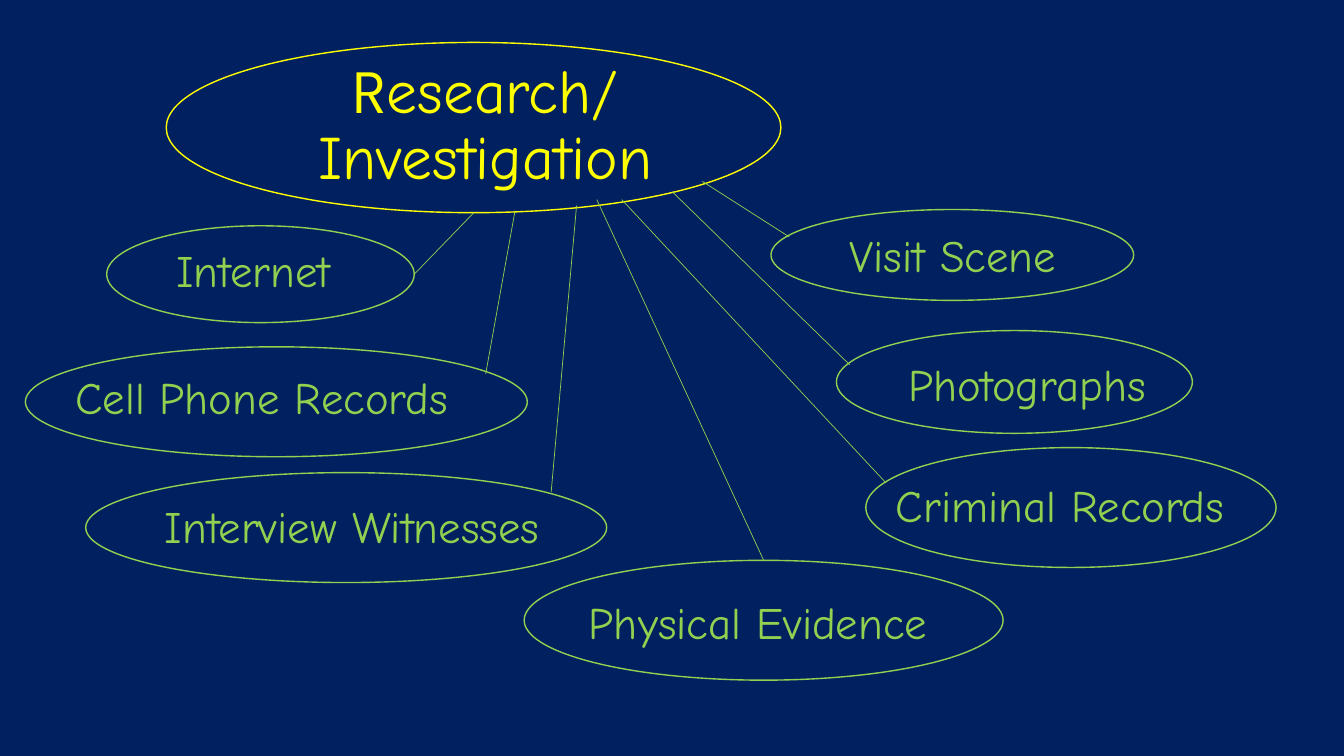
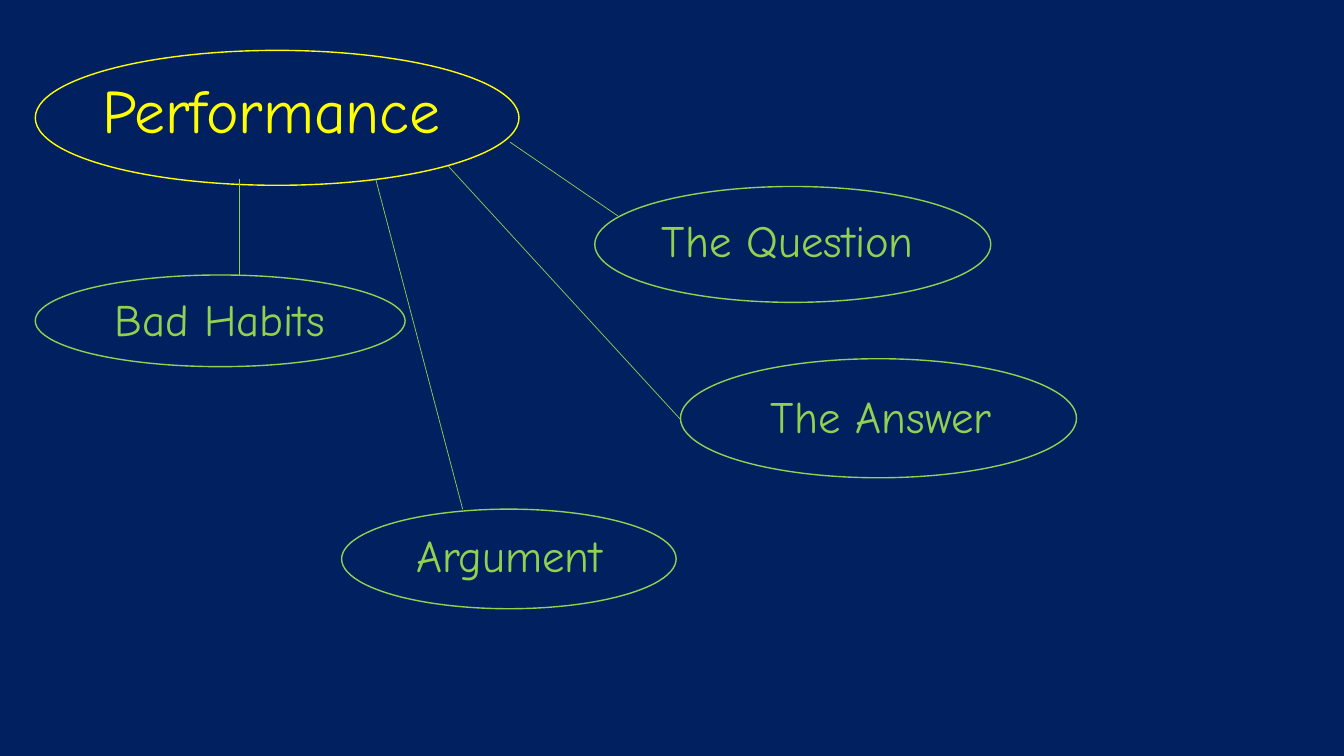
"""Build two mind-map slides: a yellow topic with green branches on navy."""
from lxml import etree
from pptx import Presentation
from pptx import util as u
from pptx.dml.color import RGBColor
from pptx.enum import shapes, text
from pptx.oxml.ns import qn

COLORS = {"navy": "002060", "topic": "FFFF00", "branch": "92D050"}
BODY, ACCENT = "Comic Neue", "League Spartan"
CENTER, LEFT = text.PP_ALIGN.CENTER, text.PP_ALIGN.LEFT
STYLES = {
    "topic": {"size": u.Pt(44), "spacing": 0.9},
    "branch": {"size": u.Pt(32), "spacing": 1.0},
}


def add_label(page, role, place, lines, align):
    box = page.shapes.add_textbox(*map(u.Cm, place))
    frame = box.text_frame
    frame.word_wrap = True
    frame.vertical_anchor = text.MSO_ANCHOR.MIDDLE
    para = frame.paragraphs[0]
    para.alignment = align
    para.line_spacing = STYLES[role]["spacing"]
    for number, line in enumerate(lines):
        if number:
            para.add_line_break()
        for words, face in line:
            span = para.add_run()
            span.text = words
            span.font.color.rgb = RGBColor.from_string(COLORS[role])
            for name, value in {"name": face, "size": STYLES[role]["size"]}.items():
                setattr(span.font, name, value)


def add_oval(page, role, place):
    oval = page.shapes.add_shape(shapes.MSO_SHAPE.OVAL, *map(u.Cm, place))
    oval.shadow.inherit = False
    oval.fill.background()
    oval.line.color.rgb = RGBColor.from_string(COLORS[role])
    oval.line.width = u.Pt(1)
    return oval


slides = [
    {
        "lines": [[("R", ACCENT), ("esearch/", BODY)], [("Investigation", BODY)]],
        "align": CENTER,
        "label": (5.74, 1.35, 13, 3.68),
        "oval": (4.19, 1.07, 15.49, 4.29),
        "branches": [
            ("Visit Scene", CENTER, (17.98, 5.56, 12.07, 1.7),
             (19.43, 5.28, 9.14, 2.29), (17.7, 4.57, 19.89, 5.97)),
            ("Photographs", CENTER, (21.34, 8.81, 9.09, 1.7),
             (21.08, 8.33, 8.97, 2.59), (16.94, 4.83, 21.41, 9.19)),
            ("Criminal Records", LEFT, (22.33, 11.89, 9.4, 1.63),
             (21.82, 11.28, 10.34, 3.02), (15.67, 5.03, 22.33, 12.17)),
            ("Physical Evidence", CENTER, (12.34, 14.61, 13.54, 2.11),
             (13.21, 14.12, 12.07, 3.02), (15.04, 5.03, 19.24, 14.12)),
            ("Interview Witnesses", CENTER, (3.38, 12.6, 11, 1.27),
             (2.16, 11.91, 13.13, 2.77), (14.53, 5.18, 13.89, 12.4)),
            ("Cell Phone Records", LEFT, (1.65, 9.19, 10.69, 1.63),
             (0.64, 8.74, 12.65, 2.77), (12.98, 5.31, 12.24, 9.42)),
            ("Internet", CENTER, (2.34, 5.97, 8.1, 1.63),
             (2.69, 5.69, 7.75, 2.44), (11.94, 5.36, 10.44, 6.91)),
        ],
    },
    {
        "lines": [[("Performance", BODY)]],
        "align": LEFT,
        "label": (2.34, 1.02, 10.74, 3.68),
        "oval": (0.89, 1.27, 12.19, 3.4),
        "branches": [
            ("The Question", CENTER, (14.99, 5.08, 9.73, 1.91),
             (14.99, 4.7, 9.98, 2.92), (12.85, 3.58, 15.57, 5.44)),
            ("The Answer", CENTER, (16.71, 9.53, 11, 1.91),
             (17.15, 9.04, 9.98, 3), (11.3, 4.19, 17.15, 10.57)),
            ("Argument", CENTER, (8.18, 12.8, 9.32, 2.34),
             (8.61, 12.83, 8.43, 2.51), (9.47, 4.52, 11.66, 12.83)),
            ("Bad Habits", LEFT, (2.64, 7.21, 6.38, 1.63),
             (0.89, 6.93, 9.32, 2.31), (6.02, 4.52, 6.02, 6.93)),
        ],
    },
]

deck = Presentation()
deck.slide_width, deck.slide_height = u.Cm(33.87), u.Cm(19.05)
backdrop = deck.slide_master.background.fill
backdrop.solid()
backdrop.fore_color.rgb = RGBColor.from_string(COLORS["navy"])

for content in slides:
    page = deck.slides.add_slide(deck.slide_layouts[6])
    add_label(page, "topic", content["label"], content["lines"], content["align"])
    add_oval(page, "topic", content["oval"])
    for name, align, label_place, oval_place, ends in content["branches"]:
        add_label(page, "branch", label_place, [[(name, BODY)]], align)
        oval = add_oval(page, "branch", oval_place)
        link = page.shapes.add_connector(shapes.MSO_CONNECTOR.STRAIGHT, *map(u.Cm, ends))
        link.line.color.rgb = RGBColor.from_string(COLORS["branch"])
        link.line.width = u.Pt(0.5)
        etree.SubElement(link._element.spPr, qn("a:effectLst"))
        if name == "Physical Evidence":
            link.end_connect(oval, 0)

deck.save("out.pptx")
